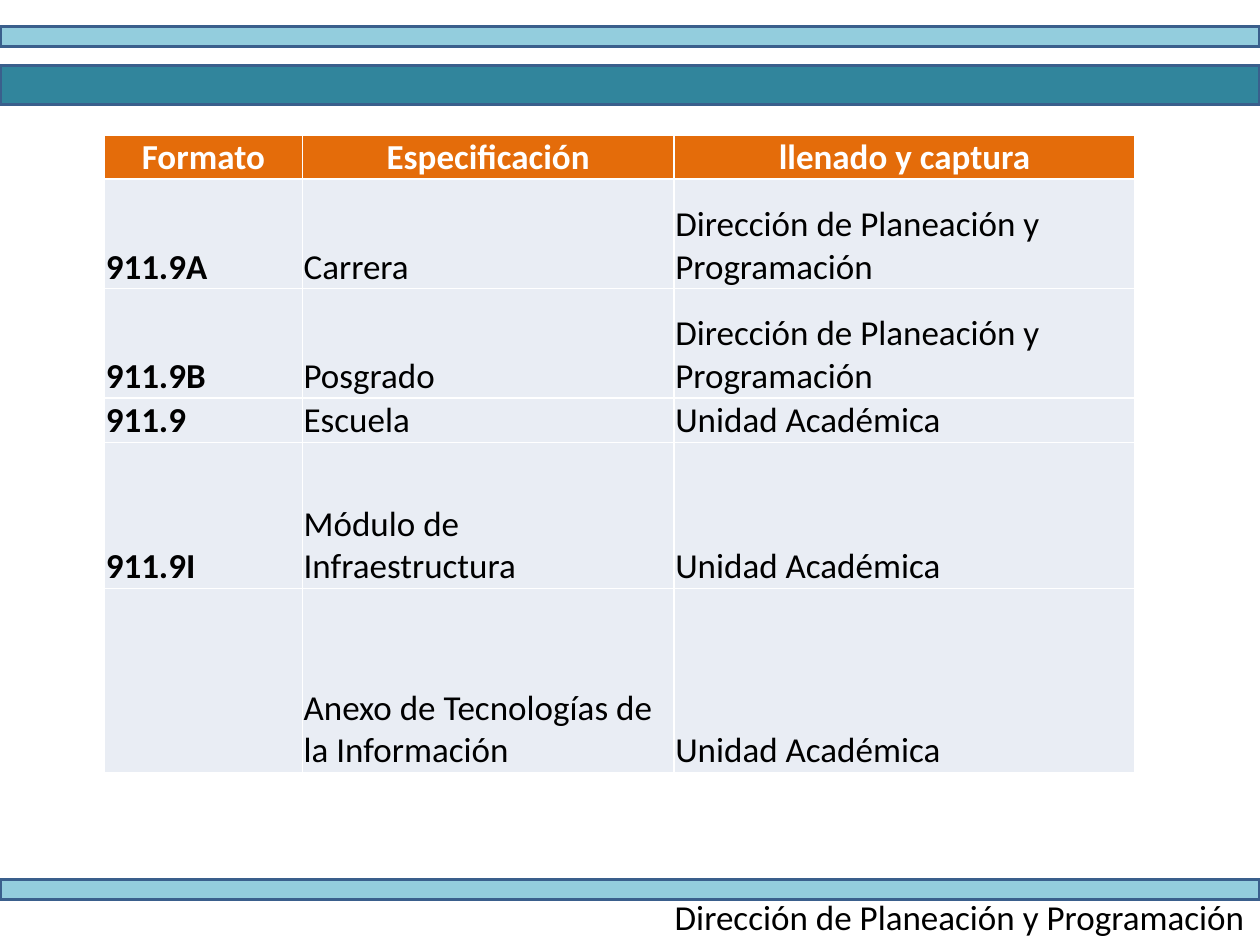
from typing import NamedTuple

from lxml.etree import SubElement
from pptx import Presentation
from pptx.dml.color import RGBColor
from pptx.enum.shapes import MSO_SHAPE
from pptx.enum.text import MSO_ANCHOR, MSO_AUTO_SIZE, PP_ALIGN
from pptx.oxml.ns import qn
from pptx.util import Inches, Pt


class Band(NamedTuple):
    top: float
    height: float
    fill: str


LIGHT_TEAL, DARK_TEAL, BAND_LINE = "93CDDD", "31859C", "3A5F8C"
HEADER_FILL, BODY_FILL, WHITE, BLACK = "E46C0A", "E9EDF4", "FFFFFF", "000000"
OFFICE = "Dirección de Planeación y Programación"
UNIT = "Unidad Académica"

BANDS = [
    Band(0.21, 0.16, LIGHT_TEAL),
    Band(0.52, 0.31, DARK_TEAL),
    Band(6.98, 0.16, LIGHT_TEAL),
]
COLUMN_WIDTHS = [1.57, 2.95, 3.66]
ROW_HEIGHTS = [0.29, 0.87, 0.87, 0.29, 1.16, 1.46]
ROWS = [
    ("Formato", "Especificación", "llenado y captura"),
    ("911.9A", "Carrera", OFFICE),
    ("911.9B", "Posgrado", OFFICE),
    ("911.9", "Escuela", UNIT),
    ("911.9I", "Módulo de Infraestructura", UNIT),
    ("", "Anexo de Tecnologías de la Información", UNIT),
]


def color(value: str) -> RGBColor:
    return RGBColor.from_string(value)


def write(para, text: str, ink: str, bold: bool, align) -> None:
    para.alignment = align
    para.font.size = Pt(20)
    if text:
        span = para.add_run()
        span.text = text
        span.font.name = "Calibri"
        span.font.size = Pt(20)
        span.font.bold = bold
        span.font.color.rgb = color(ink)


def draw_band(page, band: Band) -> None:
    bar = page.shapes.add_shape(MSO_SHAPE.RECTANGLE, 0, Inches(band.top),
                                Inches(10), Inches(band.height))
    bar.shadow.inherit = False
    bar.fill.solid()
    bar.fill.fore_color.rgb = color(band.fill)
    bar.line.color.rgb = color(BAND_LINE)
    bar.line.width = Pt(2)


def style_cell(cell, fill: str) -> None:
    cell.vertical_anchor = MSO_ANCHOR.BOTTOM
    cell.margin_left = cell.margin_right = cell.margin_top = Inches(0.01)
    cell.margin_bottom = 0
    # Borders come before the fill in the cell properties
    properties = cell._tc.get_or_add_tcPr()
    for side in ("a:lnL", "a:lnR", "a:lnT", "a:lnB"):
        border = SubElement(properties, qn(side), w=str(Pt(1)))
        solid = SubElement(border, qn("a:solidFill"))
        SubElement(solid, qn("a:srgbClr"), val=WHITE)
    cell.fill.solid()
    cell.fill.fore_color.rgb = color(fill)


def draw_table(page) -> None:
    frame = page.shapes.add_table(
        len(ROWS), len(COLUMN_WIDTHS), Inches(0.83), Inches(1.07),
        Inches(sum(COLUMN_WIDTHS)), Inches(sum(ROW_HEIGHTS)))
    table = frame.table
    for column, width in zip(table.columns, COLUMN_WIDTHS):
        column.width = Inches(width)
    for row, height in zip(table.rows, ROW_HEIGHTS):
        row.height = Inches(height)
    for row_index, texts in enumerate(ROWS):
        header = row_index == 0
        for column_index, text in enumerate(texts):
            cell = table.cell(row_index, column_index)
            style_cell(cell, HEADER_FILL if header else BODY_FILL)
            write(cell.text_frame.paragraphs[0], text,
                  WHITE if header else BLACK,
                  header or column_index == 0,
                  PP_ALIGN.CENTER if header else PP_ALIGN.LEFT)


def draw_footer(page) -> None:
    box = page.shapes.add_textbox(Inches(0.04), Inches(7.06),
                                  Inches(10), Inches(0.44))
    box.text_frame.word_wrap = True
    box.text_frame.auto_size = MSO_AUTO_SIZE.SHAPE_TO_FIT_TEXT
    write(box.text_frame.paragraphs[0], OFFICE + " ", BLACK, False,
          PP_ALIGN.RIGHT)


def main() -> None:
    deck = Presentation()
    deck.slide_width, deck.slide_height = Inches(10), Inches(7.5)
    page = deck.slides.add_slide(deck.slide_layouts[6])
    # Page bands
    for band in BANDS:
        draw_band(page, band)
    # Formats table and footer
    draw_table(page)
    draw_footer(page)
    deck.save("out.pptx")


if __name__ == "__main__":
    main()
